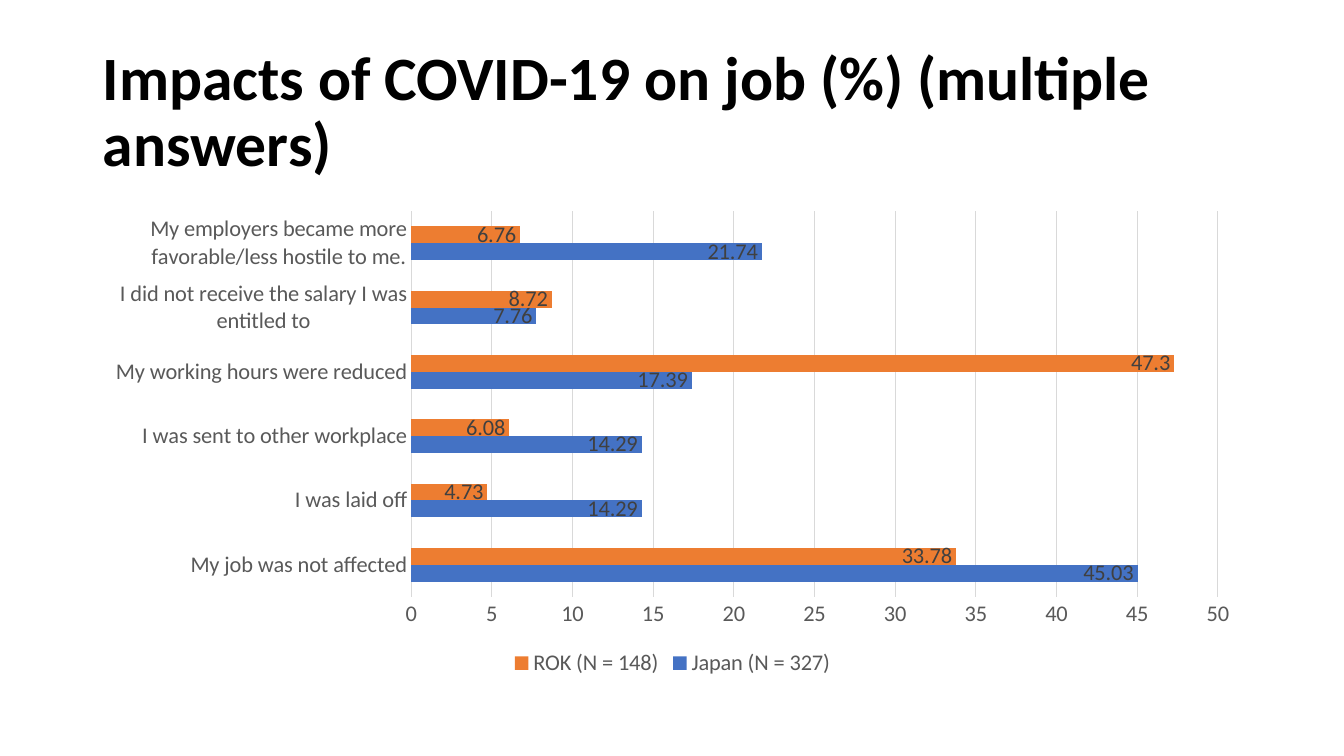
"""Build a slide with a bar chart of how COVID-19 affected jobs."""
from dataclasses import dataclass

from pptx import Presentation
from pptx.chart.chart import Chart
from pptx.chart.data import CategoryChartData
from pptx.dml.color import RGBColor
from pptx.enum.chart import XL_CHART_TYPE as ChartType
from pptx.enum.chart import XL_LABEL_POSITION as LabelPosition
from pptx.enum.chart import XL_LEGEND_POSITION as LegendPosition
from pptx.enum.chart import XL_TICK_MARK as TickMark
from pptx.enum.text import MSO_ANCHOR, PP_ALIGN
from pptx.slide import Slide
from pptx.text.text import Font
from pptx.util import Inches, Pt

BLACK = RGBColor(0x00, 0x00, 0x00)
DARK_GRAY = RGBColor(0x40, 0x40, 0x40)
GRAY = RGBColor(0x59, 0x59, 0x59)
LIGHT_GRAY = RGBColor(0xD9, 0xD9, 0xD9)
BLUE = RGBColor(0x44, 0x72, 0xC4)
ORANGE = RGBColor(0xED, 0x7D, 0x31)
FONT_NAME = "Calibri"
LEFT, WIDTH = Inches(0.92), Inches(11.5)


@dataclass(frozen=True)
class Country:
    name: str
    color: RGBColor
    percentages: tuple[float, ...]


IMPACTS = (
    "My job was not affected",
    "I was laid off",
    "I was sent to other workplace",
    "My working hours were reduced",
    "I did not receive the salary I was entitled to",
    "My employers became more favorable/less hostile to me.",
)
COUNTRIES = (
    Country("Japan (N = 327)", BLUE, (45.03, 14.29, 14.29, 17.39, 7.76, 21.74)),
    Country("ROK (N = 148)", ORANGE, (33.78, 4.73, 6.08, 47.3, 8.72, 6.76)),
)


def style_font(font: Font, size: float, color: RGBColor, bold: bool = False) -> None:
    font.name = FONT_NAME
    font.size = Pt(size)
    font.bold = bold
    font.color.rgb = color


def add_title(page: Slide, text: str) -> None:
    title = page.shapes.title
    title.left, title.top, title.width, title.height = LEFT, Inches(0.4), WIDTH, Inches(1.45)
    title.text_frame.word_wrap = True
    title.text_frame.vertical_anchor = MSO_ANCHOR.MIDDLE
    para = title.text_frame.paragraphs[0]
    para.alignment = PP_ALIGN.LEFT
    para.line_spacing = 0.9
    span = para.add_run()
    span.text = text
    style_font(span.font, 44, BLACK, bold=True)


def style_axes(chart: Chart) -> None:
    for axis in (chart.category_axis, chart.value_axis):
        axis.major_tick_mark = axis.minor_tick_mark = TickMark.NONE
        style_font(axis.tick_labels.font, 16, GRAY)
    chart.value_axis.has_major_gridlines = True
    chart.value_axis.format.line.fill.background()
    for line in (chart.category_axis.format.line, chart.value_axis.major_gridlines.format.line):
        line.color.rgb = LIGHT_GRAY
        line.width = Pt(0.75)


def add_impact_chart(page: Slide) -> None:
    data = CategoryChartData()
    data.categories = IMPACTS
    for country in COUNTRIES:
        data.add_series(country.name, country.percentages)
    chart = page.shapes.add_chart(
        ChartType.BAR_CLUSTERED, LEFT, Inches(2), WIDTH, Inches(4.76), data
    ).chart
    style_font(chart.font, 16, BLACK)
    chart.has_title = False
    style_axes(chart)

    chart.has_legend = True
    chart.legend.position = LegendPosition.BOTTOM
    chart.legend.include_in_layout = False
    style_font(chart.legend.font, 16, GRAY)

    plot = chart.plots[0]
    plot.gap_width = 182
    plot.vary_by_categories = False
    for country, series in zip(COUNTRIES, plot.series):
        series.format.fill.solid()
        series.format.fill.fore_color.rgb = country.color
        series.invert_if_negative = False
        labels = series.data_labels
        labels.show_value = True
        labels.position = LabelPosition.INSIDE_END
        style_font(labels.font, 16, DARK_GRAY)


def main() -> None:
    deck = Presentation()
    deck.slide_width, deck.slide_height = Inches(13.33), Inches(7.5)
    page = deck.slides.add_slide(deck.slide_layouts[5])
    add_title(page, "Impacts of COVID-19 on job (%) (multiple answers)")
    add_impact_chart(page)
    deck.save("out.pptx")


if __name__ == "__main__":
    main()
